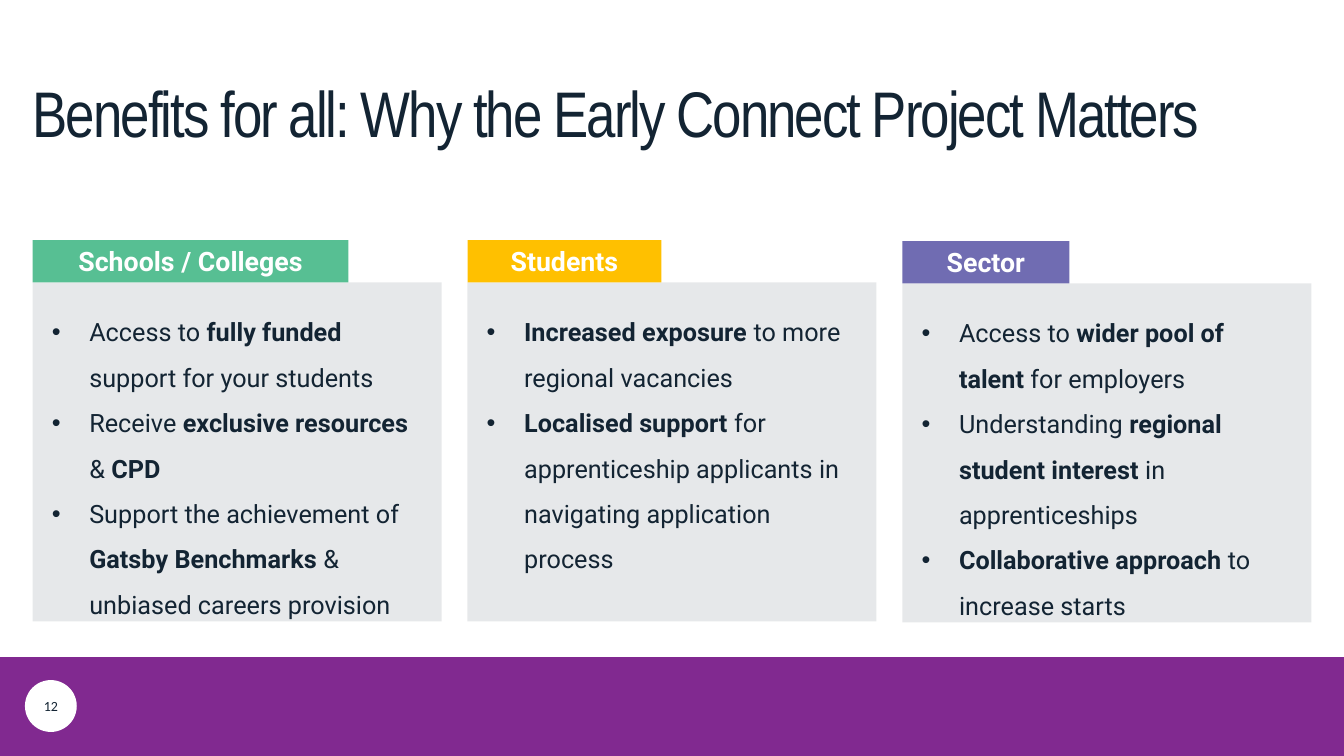
from lxml.etree import SubElement
from pptx import Presentation
from pptx.dml.color import RGBColor
from pptx.enum.shapes import MSO_SHAPE
from pptx.enum.text import MSO_ANCHOR, PP_ALIGN
from pptx.oxml.ns import qn
from pptx.util import Inches, Pt

COLORS = {"navy": "132433", "purple": "812990", "white": "FFFFFF",
          "green": "57BF93", "amber": "FFC000", "violet": "706CB2"}

COLUMNS = [
    ("Schools / Colleges", "green", 0.34, 2.5, 3.29, [
        "Access to **fully funded **support for your students",
        "Receive **exclusive resources** & **CPD**",
        "Support the achievement of **Gatsby Benchmarks** & unbiased careers provision"]),
    ("Students", "amber", 4.87, 2.5, 2.02, [
        "**Increased exposure **to more regional vacancies",
        "**Localised support **for apprenticeship applicants in navigating application process"]),
    ("Sector", "violet", 9.4, 2.51, 1.74, [
        "Access to **wider pool of talent **for employers",
        "Understanding **regional student interest** in apprenticeships",
        "**Collaborative approach **to increase starts"]),
]


def add_box(kind, x, y, w, h, color):
    sp = s.shapes.add_shape(kind, Inches(x), Inches(y), Inches(w), Inches(h))
    sp.shadow.inherit = False
    sp.fill.solid()
    sp.fill.fore_color.rgb = RGBColor.from_string(COLORS[color])
    sp.line.fill.background()
    return sp


def write(text, p, size, font="Roboto", color="navy", bold=False,
          align=PP_ALIGN.LEFT, spacing=1.0):
    p.alignment = align
    p.line_spacing = spacing
    for i, part in enumerate(text.split("**")):
        if part:
            r = p.add_run()
            r.text = part
            r.font.size = Pt(size)
            r.font.name = font
            r.font.bold = bold or i % 2 == 1
            r.font.color.rgb = RGBColor.from_string(COLORS[color])


prs = Presentation()
prs.slide_width = Inches(14)
prs.slide_height = Inches(7.87)
s = prs.slides.add_slide(prs.slide_layouts[5])

add_box(MSO_SHAPE.RECTANGLE, 0, 6.84, 14, 1.03, "purple")
badge = add_box(MSO_SHAPE.OVAL, 0.26, 7.08, 0.54, 0.54, "white")
tf = badge.text_frame
tf.margin_left = tf.margin_right = tf.margin_top = tf.margin_bottom = Inches(0.08)
tf.vertical_anchor = MSO_ANCHOR.MIDDLE
write("12", tf.paragraphs[0], 10.5, font="Calibri", align=PP_ALIGN.CENTER)

title = s.shapes.title
title.left, title.top = Inches(0.34), Inches(0.85)
title.width, title.height = Inches(13.27), Inches(1.58)
tf = title.text_frame
tf.margin_left = tf.margin_right = tf.margin_top = tf.margin_bottom = 0
tf.vertical_anchor = MSO_ANCHOR.TOP
tf.word_wrap = False
p = tf.paragraphs[0]
write("Benefits for all: Why the Early Connect Project Matters", p, 48.3,
      font="Arial Narrow", spacing=0.9)
p.runs[0].font._element.set("spc", "-150")

for heading, color, x, y, w, points in COLUMNS:
    panel = add_box(MSO_SHAPE.RECTANGLE, x, y + 0.44, 4.26, 3.53, "navy")
    rgb = panel._element.spPr.find(qn("a:solidFill")).find(qn("a:srgbClr"))
    SubElement(rgb, qn("a:alpha"), val="10000")
    tf = panel.text_frame
    tf.word_wrap = True
    tf.vertical_anchor = MSO_ANCHOR.TOP
    tf.margin_left = tf.margin_right = tf.margin_top = tf.margin_bottom = Inches(0.2)
    for i, point in enumerate(points):
        p = tf.add_paragraph() if i else tf.paragraphs[0]
        write(point, p, 18.9, spacing=1.5)
        pPr = p._p.get_or_add_pPr()
        pPr.set("marL", str(Inches(0.39)))
        pPr.set("indent", str(-Inches(0.39)))
        SubElement(pPr, qn("a:buClr")).append(
            pPr.makeelement(qn("a:srgbClr"), {"val": COLORS["navy"]}))
        SubElement(pPr, qn("a:buFont"), typeface="Arial")
        SubElement(pPr, qn("a:buChar"), char="•")

    tab = add_box(MSO_SHAPE.RECTANGLE, x, y, w, 0.44, color)
    tf = tab.text_frame
    tf.word_wrap = True
    tf.vertical_anchor = MSO_ANCHOR.TOP
    write(heading, tf.paragraphs[0], 20, color="white", bold=True,
          align=PP_ALIGN.CENTER)

prs.save("out.pptx")
